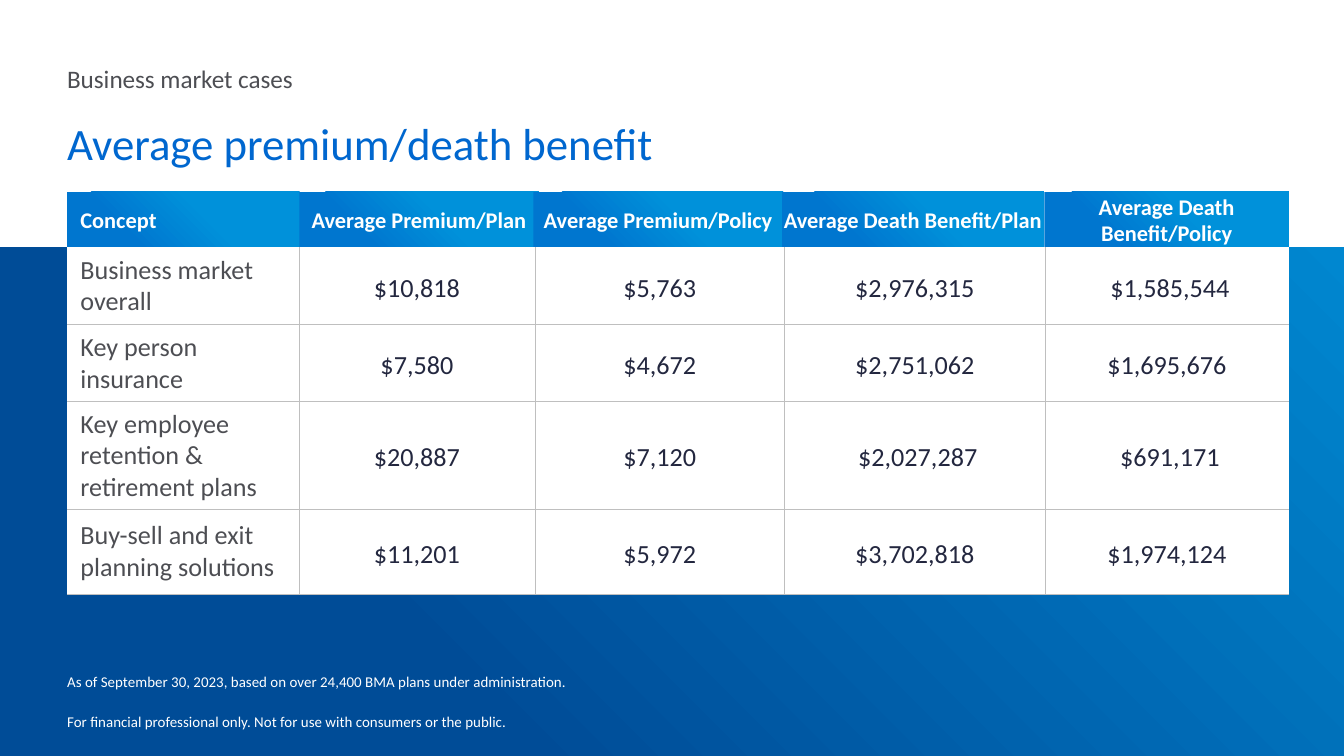
from lxml.etree import SubElement
from pptx import Presentation
from pptx.dml.color import RGBColor as RGB
from pptx.enum.shapes import MSO_SHAPE as Shape
from pptx.enum.text import MSO_ANCHOR as Anchor, PP_ALIGN as Align
from pptx.oxml.ns import qn
from pptx.util import Cm, Pt

HUES = {
    "white": "FFFFFF", "navy": "004C97", "sky": "0091DA", "blue": "0076CF",
    "title": "0067CF", "grey": "4D4E53", "ink": "23273F", "rule": "BFBFBF",
}
FONT = "Calibri"
WIDE, HIGH = 25.4, 14.29
LEFT, SPAN = 1.27, 23.09
BAND = 4.67  # height of the white top band

# Label, offset from the table's left edge, width
HEADS = [
    ("Concept", 0, 4.39),
    ("Average Premium/Plan", 4.39, 4.52),
    ("Average Premium/Policy", 8.81, 4.72),
    ("Average Death Benefit/Plan", 13.51, 4.95),
    ("Average Death Benefit/Policy", 18.47, 4.62),
]
COLS = [4.38, 4.46, 4.72, 4.92, 4.61]
ROWS = [1.47, 1.27, 1.65, 1.6]
CASES = [
    ("Business market overall", "$10,818", "$5,763", "$2,976,315", " $1,585,544"),
    ("Key person insurance", "$7,580", "$4,672", "$2,751,062", "$1,695,676"),
    ("Key employee retention & retirement plans",
     "$20,887", "$7,120", " $2,027,287", " $691,171"),
    ("Buy-sell and exit planning solutions",
     "$11,201", "$5,972", "$3,702,818", "$1,974,124"),
]


def hue(name):
    return RGB.from_string(HUES[name])


def write(para, text, size, color, bold=False, align=Align.LEFT,
          line=None, before=0, after=0):
    """Fill one paragraph with formatted text."""
    para.alignment = align
    para.space_before, para.space_after = Pt(before), Pt(after)
    if line:
        para.line_spacing = line
    run = para.add_run()
    run.text = text
    font = run.font
    font.name, font.size, font.bold = FONT, Pt(size), bold
    font.color.rgb = hue(color)


def inset(part, left=0, top=0, right=0, low=0):
    part.margin_left, part.margin_right = Cm(left), Cm(right)
    part.margin_top, part.margin_bottom = Cm(top), Cm(low)


def block(slide, box, *stops):
    """Rectangle with a plain fill, or a diagonal blend of two stops."""
    shape = slide.shapes.add_shape(Shape.RECTANGLE, *map(Cm, box))
    shape.shadow.inherit = False
    shape.line.fill.background()
    if len(stops) == 1:
        shape.fill.solid()
        shape.fill.fore_color.rgb = hue(stops[0])
        return shape
    shape.fill.gradient()
    shape.fill.gradient_angle = 45
    for stop, (name, place) in zip(shape.fill.gradient_stops, stops):
        stop.color.rgb = hue(name)
        stop.position = place
    return shape


def textbox(slide, box, anchor=Anchor.TOP):
    frame = slide.shapes.add_textbox(*map(Cm, box)).text_frame
    frame.word_wrap = True
    frame.vertical_anchor = anchor
    inset(frame)
    return frame


def backdrop(slide, box):
    left, top, width, height = box
    block(slide, box, ("navy", 0.25), ("sky", 0.99))
    block(slide, (left, top, width, BAND), "white")


def heading(slide, box):
    frame = textbox(slide, box)
    write(frame.paragraphs[0], "Business market cases", 13.5, "grey",
          line=0.8, after=12)
    write(frame.add_paragraph(), "Average premium/death benefit", 24, "title",
          line=0.8, before=6, after=12)


def footer(slide, box):
    frame = textbox(slide, box, Anchor.BOTTOM)
    write(frame.paragraphs[0],
          "As of September 30, 2023, based on over 24,400 BMA plans "
          "under administration.", 8, "white", after=2)
    write(frame.add_paragraph(),
          "For financial professional only. Not for use with consumers "
          "or the public.", 8, "white", before=9.75)


def border(cell, sides):
    """Rule the named sides and clear the others."""
    props = cell._tc.get_or_add_tcPr()
    for i, side in enumerate("LRTB"):
        line = SubElement(props, qn(f"a:ln{side}"), w=str(Pt(0.5)))
        if side in sides:
            fill = SubElement(line, qn("a:solidFill"))
            SubElement(fill, qn("a:srgbClr"), val=HUES["rule"])
        else:
            SubElement(line, qn("a:noFill"))
        props.insert(i, line)


def grid(slide, box):
    table = slide.shapes.add_table(len(ROWS), len(COLS), *map(Cm, box)).table
    table.first_row = table.horz_banding = False
    for col, width in zip(table.columns, COLS):
        col.width = Cm(width)
    for row, height in zip(table.rows, ROWS):
        row.height = Cm(height)
    for r, case in enumerate(CASES):
        for c, text in enumerate(case):
            cell = table.cell(r, c)
            cell.vertical_anchor = Anchor.MIDDLE
            cell.fill.solid()
            cell.fill.fore_color.rgb = hue("white")
            para = cell.text_frame.paragraphs[0]
            if c == 0:
                inset(cell, 0.25, 0.13, 0.25, 0.13)
                write(para, text, 14, "grey")
            else:
                inset(cell, 0.18, 0, 0.18, 0)
                write(para, text, 14, "ink", align=Align.CENTER, line=1.15)
            border(cell, "B" + "T" * (r > 0) + "L" * (c > 0)
                   + "R" * (c < len(COLS) - 1))


def header(slide, box):
    left, top, _, height = box
    for i, (label, shift, width) in enumerate(HEADS):
        shape = block(slide, (left + shift, top, width, height),
                      ("blue", 0.25), ("sky", 0.6))
        frame = shape.text_frame
        frame.word_wrap = True
        frame.vertical_anchor = Anchor.MIDDLE
        inset(frame, left=0 if i else 0.25)
        write(frame.paragraphs[0], label, 12, "white", bold=True,
              align=Align.CENTER if i else Align.LEFT)


def main():
    deck = Presentation()
    deck.slide_width, deck.slide_height = Cm(WIDE), Cm(HIGH)
    slide = deck.slides.add_slide(deck.slide_layouts[6])
    backdrop(slide, (0, 0, WIDE, HIGH))
    heading(slide, (LEFT, 1.3, 20.93, 2.03))
    footer(slide, (LEFT, 11.63, SPAN, 2.18))
    grid(slide, (LEFT, BAND, SPAN, 6.98))
    header(slide, (LEFT, 3.63, SPAN, 1.04))
    deck.save("out.pptx")


if __name__ == "__main__":
    main()
